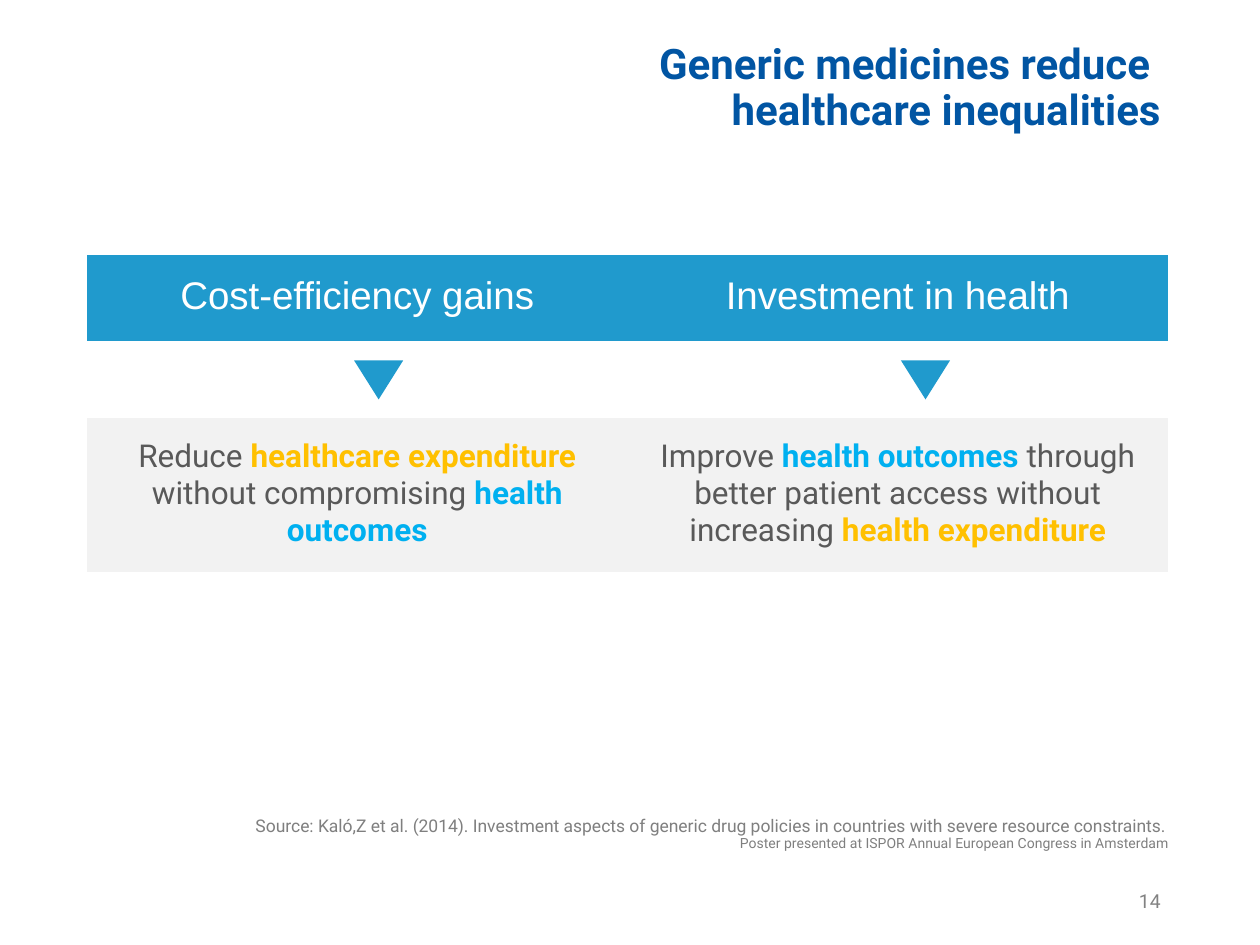
from copy import deepcopy
from dataclasses import dataclass

from pptx import Presentation
from pptx.dml.color import RGBColor
from pptx.enum.shapes import MSO_SHAPE
from pptx.enum.text import MSO_ANCHOR, PP_ALIGN
from pptx.oxml.ns import qn
from pptx.util import Inches, Pt

TRIANGLE = MSO_SHAPE.ISOSCELES_TRIANGLE
TOP, MIDDLE = MSO_ANCHOR.TOP, MSO_ANCHOR.MIDDLE
CENTER, RIGHT = PP_ALIGN.CENTER, PP_ALIGN.RIGHT

NAVY = RGBColor(0x01, 0x55, 0xA3)
BLUE = RGBColor(0x20, 0x9A, 0xCD)
SKY = RGBColor(0x00, 0xB0, 0xF0)
AMBER = RGBColor(0xFF, 0xC0, 0x00)
WHITE = RGBColor(0xFF, 0xFF, 0xFF)
PALE = RGBColor(0xF2, 0xF2, 0xF2)
DARK = RGBColor(0x59, 0x59, 0x59)
GREY = RGBColor(0x7F, 0x7F, 0x7F)
NUMBER_GREY = RGBColor(0x82, 0x82, 0x82)

NO_STYLE = "{2D5ABB26-0587-4C30-8999-92F81FD0307C}"
LEFT, COLUMN_WIDTH, CELL_MARGIN = 0.69, 4.29, 0.16
ARROW_LEFT, ARROW_STEP = 2.81, 4.34


@dataclass
class Run:
    text: str
    size: float
    color: RGBColor
    bold: bool = False
    font: str = "Roboto"


@dataclass
class Label:
    left: float
    top: float
    width: float
    height: float
    lines: list[list[Run]]
    anchor: MSO_ANCHOR = MIDDLE
    spacing: float = 1.0


@dataclass
class Band:
    top: float
    height: float
    fill: RGBColor
    cells: list[list[Run]]


def add_runs(p, runs: list[Run]) -> None:
    for run in runs:
        r = p.add_run()
        r.text = run.text
        r.font.name = run.font
        r.font.size = Pt(run.size)
        r.font.bold = run.bold
        r.font.color.rgb = run.color


def add_label(s, label: Label) -> None:
    box = s.shapes.add_textbox(Inches(label.left), Inches(label.top),
                               Inches(label.width), Inches(label.height))
    tf = box.text_frame
    tf.word_wrap = True
    tf.vertical_anchor = label.anchor
    p = tf.paragraphs[0]
    p.alignment = RIGHT
    p.line_spacing = label.spacing
    for i, runs in enumerate(label.lines):
        if i:
            properties = deepcopy(p.runs[-1].font._element)
            p.add_line_break()
            p._p.findall(qn("a:br"))[-1].append(properties)
        add_runs(p, runs)


def add_band(s, band: Band) -> None:
    count = len(band.cells)
    frame = s.shapes.add_table(1, count, Inches(LEFT), Inches(band.top),
                               Inches(COLUMN_WIDTH * count), Inches(band.height))
    table = frame.table
    table.first_row = table.horz_banding = False
    table._tbl.tblPr.find(qn("a:tableStyleId")).text = NO_STYLE
    for i, runs in enumerate(band.cells):
        table.columns[i].width = Inches(COLUMN_WIDTH)
        cell = table.cell(0, i)
        cell.fill.solid()
        cell.fill.fore_color.rgb = band.fill
        cell.margin_left = cell.margin_right = Inches(CELL_MARGIN)
        cell.margin_top = cell.margin_bottom = Inches(CELL_MARGIN)
        p = cell.text_frame.paragraphs[0]
        p.alignment = CENTER
        add_runs(p, runs)


def add_arrow(s, left: float) -> None:
    sp = s.shapes.add_shape(TRIANGLE, Inches(left), Inches(2.86), Inches(0.39), Inches(0.31))
    sp.rotation = 180
    sp.shadow.inherit = False
    sp.fill.solid()
    sp.fill.fore_color.rgb = BLUE
    sp.line.fill.background()


LABELS = [
    Label(0.69, -0.02, 8.62, 1.45, [
        [Run("Generic medicines reduce ", 24, NAVY, True)],
        [Run("healthcare inequalities", 24, NAVY, True)],
    ], spacing=0.9),
    Label(7.06, 6.95, 2.25, 0.4, [[Run("14", 11, NUMBER_GREY)]]),
    Label(0.01, 6.44, 9.37, 0.37, [
        [Run("Source: Kaló,Z et al. (2014). Investment aspects of generic drug policies "
             "in countries with severe resource constraints. ", 10, GREY)],
        [Run("Poster presented at ISPOR Annual European Congress in Amsterdam", 8, GREY)],
    ], TOP, 0.9),
]

BANDS = [
    Band(2.02, 0.68, BLUE, [
        [Run("Cost-efficiency gains", 22, WHITE, font="Arial")],
        [Run("Investment in health", 22, WHITE, font="Arial")],
    ]),
    Band(3.32, 1.21, PALE, [
        [Run("Reduce ", 18, DARK),
         Run("healthcare expenditure ", 18, AMBER, True),
         Run("without compromising ", 18, DARK),
         Run("health outcomes", 18, SKY, True)],
        [Run("Improve ", 18, DARK),
         Run("health outcomes ", 18, SKY, True),
         Run("through better patient access without increasing ", 18, DARK),
         Run("health expenditure", 18, AMBER, True)],
    ]),
]


def main() -> None:
    prs = Presentation()
    prs.slide_width, prs.slide_height = Inches(10), Inches(7.5)
    s = prs.slides.add_slide(prs.slide_layouts[6])
    for label in LABELS:
        add_label(s, label)
    for band in BANDS:
        add_band(s, band)
    for i in range(2):
        add_arrow(s, ARROW_LEFT + i * ARROW_STEP)
    prs.save("out.pptx")


if __name__ == "__main__":
    main()
